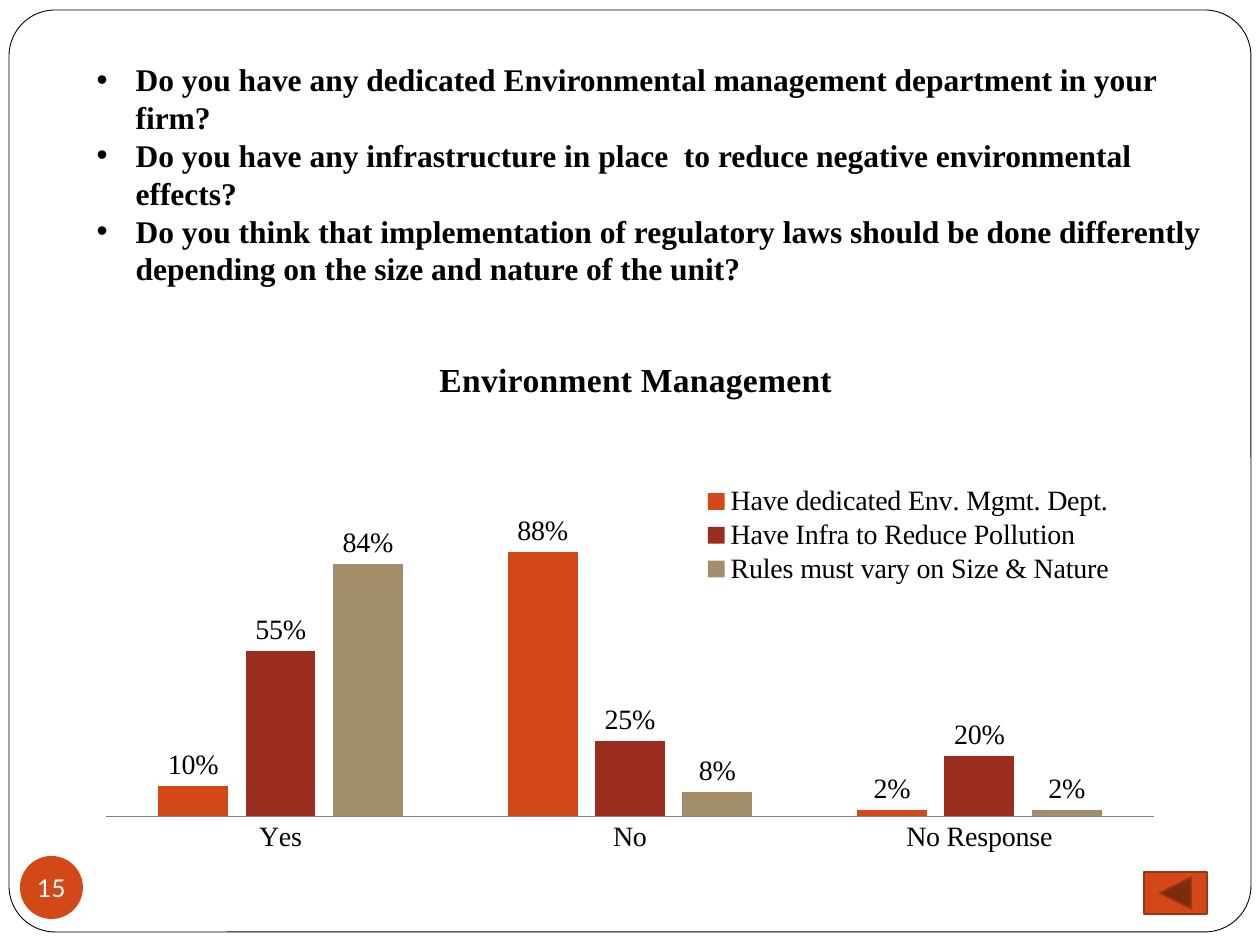
from lxml.etree import SubElement
from pptx import Presentation
from pptx.chart.data import CategoryChartData
from pptx.dml.color import RGBColor
from pptx.enum.chart import XL_CHART_TYPE as CT, XL_LABEL_POSITION as LP
from pptx.enum.chart import XL_LEGEND_POSITION as LEG, XL_TICK_MARK as TM
from pptx.enum.shapes import MSO_SHAPE as SH
from pptx.enum.text import MSO_ANCHOR, MSO_AUTO_SIZE, PP_ALIGN
from pptx.oxml import parse_xml
from pptx.oxml.ns import nsdecls, qn
from pptx.util import Pt

COLORS = {"ink": "000000", "paper": "FFFFFF", "orange": "D34817", "edge": "9C3511",
          "red": "9B2D1F", "tan": "A28E6A", "axis": "808080"}

QUESTIONS = [
    "Do you have any dedicated Environmental management department in your firm?",
    "Do you have any infrastructure in place  to reduce negative environmental effects?",
    "Do you think that implementation of regulatory laws should be done differently "
    "depending on the size and nature of the unit?",
]
ANSWERS = ["Yes", "No", "No Response"]
SERIES = [
    ("Have dedicated Env. Mgmt. Dept.", (0.10, 0.88, 0.02), "orange"),
    ("Have Infra to Reduce Pollution", (0.55, 0.25, 0.20), "red"),
    ("Rules must vary on Size & Nature", (0.84, 0.08, 0.02), "tan"),
]


def px(n):
    return round(n * 914400 / 126)


def rgb(name):
    return RGBColor.from_string(COLORS[name])


def set_layout(parent, index, **fractions):
    for old in parent.findall(qn("c:layout")):
        parent.remove(old)
    layout = parse_xml(f"<c:layout {nsdecls('c')}/>")
    manual = SubElement(layout, qn("c:manualLayout"))
    if parent.tag == qn("c:plotArea"):
        SubElement(manual, qn("c:layoutTarget")).set("val", "inner")
    for key in ("x", "y"):
        SubElement(manual, qn(f"c:{key}Mode")).set("val", "edge")
    for key, value in fractions.items():
        SubElement(manual, qn(f"c:{key}")).set("val", str(value))
    parent.insert(index, layout)


class Deck:
    font = "Times New Roman"

    def __init__(self):
        self.prs = Presentation()
        self.prs.slide_width, self.prs.slide_height = px(1260), px(945)

    def slide(self):
        self.s = self.prs.slides.add_slide(self.prs.slide_layouts[1])
        title = self.s.shapes.title._element
        title.getparent().remove(title)

    def style(self, font, size, color="ink", bold=False, name=None):
        font.name, font.size, font.bold = name or self.font, Pt(size), bold
        font.color.rgb = rgb(color)

    def shape(self, kind, box, fill, line=None, width=1):
        sp = self.s.shapes.add_shape(kind, *map(px, box))
        sp.shadow.inherit = False
        sp.fill.solid()
        sp.fill.fore_color.rgb = rgb(fill)
        if line:
            sp.line.color.rgb = rgb(line)
            sp.line.width = Pt(width)
        else:
            sp.line.fill.background()
        return sp

    def frame(self, box):
        sp = self.shape(SH.ROUNDED_RECTANGLE, box, "paper", "ink", 0.5)
        sp.adjustments[0] = 0.05

    def badge(self, text, box):
        tf = self.shape(SH.OVAL, box, "orange").text_frame
        tf.margin_left = tf.margin_right = tf.margin_top = tf.margin_bottom = 0
        tf.word_wrap = False
        tf.vertical_anchor = MSO_ANCHOR.MIDDLE
        p = tf.paragraphs[0]
        p.alignment = PP_ALIGN.CENTER
        r = p.add_run()
        r.text = text
        self.style(r.font, 14, "paper", name="Lato")

    def bullets(self, items, box, indent):
        sp = self.s.placeholders[1]
        sp.left, sp.top, sp.width, sp.height = map(px, box)
        self.s.shapes._spTree.append(sp._element)
        tf = sp.text_frame
        tf.word_wrap = True
        tf.auto_size = MSO_AUTO_SIZE.NONE
        tf.vertical_anchor = MSO_ANCHOR.TOP
        for i, item in enumerate(items):
            p = tf.add_paragraph() if i else tf.paragraphs[0]
            p.space_before = p.space_after = Pt(0)
            p.line_spacing = 1.0
            pPr = p._p.get_or_add_pPr()
            pPr.set("marL", str(px(indent)))
            pPr.set("indent", str(-px(indent)))
            SubElement(pPr, qn("a:buFont")).set("typeface", "Arial")
            SubElement(pPr, qn("a:buChar")).set("char", "•")
            r = p.add_run()
            r.text = item
            self.style(r.font, 18, bold=True)

    def chart(self, title, cats, series, box):
        data = CategoryChartData(number_format="0%")
        data.categories = cats
        for name, values, _ in series:
            data.add_series(name, values)
        chart = self.s.shapes.add_chart(CT.COLUMN_CLUSTERED, *map(px, box), data).chart
        self.style(chart.font, 16)

        p = chart.chart_title.text_frame.paragraphs[0]
        r = p.add_run()
        r.text = title
        self.style(r.font, 19.2, bold=True)
        set_layout(chart.chart_title._element, 1, x=0.32, y=0.05)

        chart.has_legend = True
        legend = chart.legend
        legend.position = LEG.TOP
        legend.include_in_layout = False
        self.style(legend.font, 16)
        set_layout(legend._element, 1, x=0.56, y=0.29, w=0.39, h=0.19)

        values, answers = chart.value_axis, chart.category_axis
        values.minimum_scale, values.maximum_scale = 0, 1
        values.has_major_gridlines = False
        values.visible = False
        values.tick_labels.number_format = "0%"
        values.tick_labels.number_format_is_linked = False
        answers.major_tick_mark = answers.minor_tick_mark = TM.NONE
        answers.format.line.color.rgb = rgb("axis")

        plot = chart.plots[0]
        plot.gap_width, plot.overlap, plot.vary_by_categories = 150, -25, False
        for ser, (_, _, color) in zip(plot.series, series):
            ser.format.fill.solid()
            ser.format.fill.fore_color.rgb = rgb(color)
            labels = ser.data_labels
            labels.show_value = True
            labels.number_format, labels.number_format_is_linked = "0%", False
            labels.position = LP.OUTSIDE_END
            self.style(labels.font, 16)
        plot_area = chart._chartSpace.find(".//" + qn("c:plotArea"))
        set_layout(plot_area, 0, x=0.02, y=0.35, w=0.96, h=0.55)


def main():
    deck = Deck()
    deck.slide()
    deck.frame((9, 10, 1242, 922))
    deck.badge("15", (20, 856, 63, 63))
    deck.shape(SH.ACTION_BUTTON_BACK_OR_PREVIOUS, (1144, 872, 63, 42), "orange", "edge")
    deck.bullets(QUESTIONS, (84, 54, 1134, 242), 39)
    deck.chart("Environment Management", ANSWERS, SERIES, (84, 325, 1092, 546))
    deck.prs.save("out.pptx")


if __name__ == "__main__":
    main()
